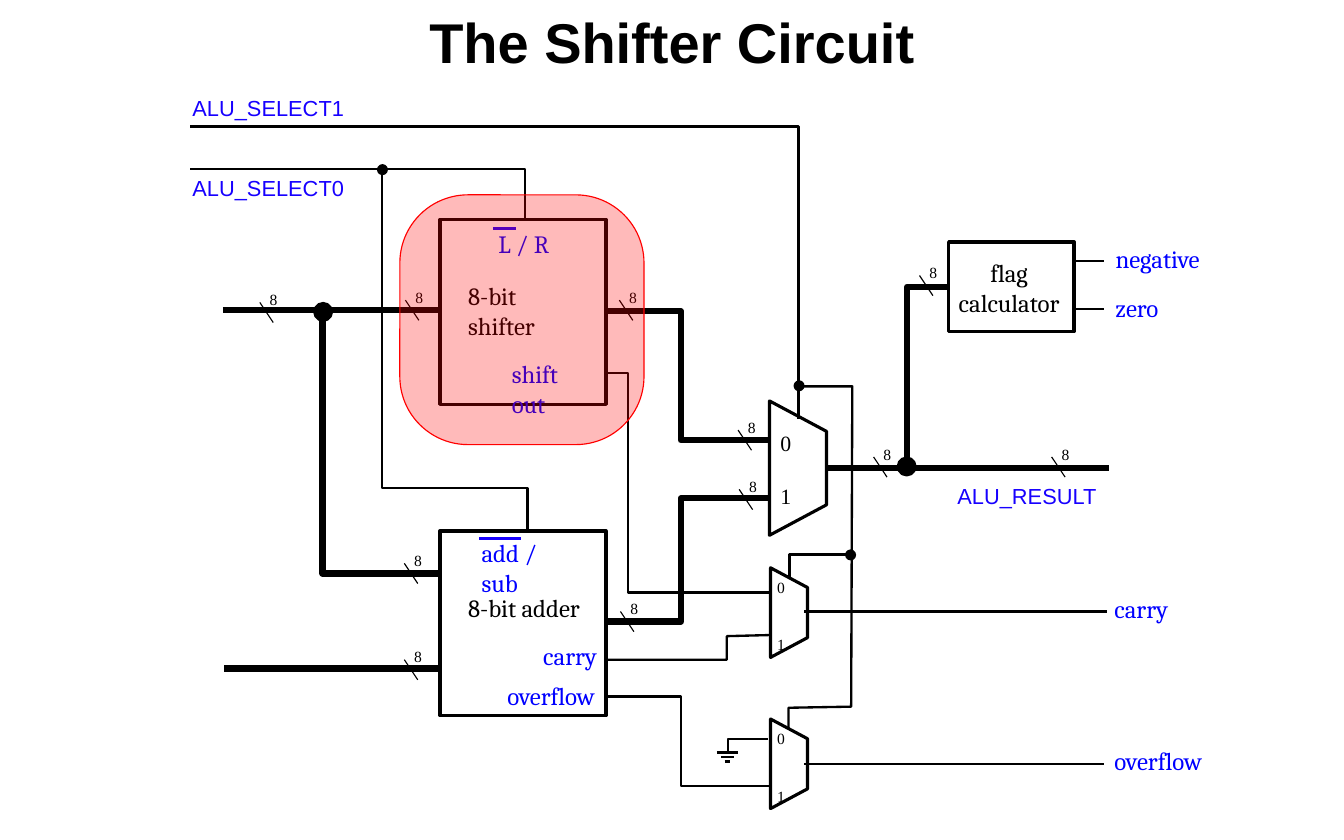
from lxml import etree
from pptx import Presentation
from pptx import util as u
from pptx.dml.color import RGBColor
from pptx.enum import shapes, text
from pptx.oxml.ns import qn

COLOURS = {"ink": "000000", "paper": "FFFFFF", "signal": "0000FF",
           "select": "1700FF", "highlight": "FF0000"}
THIN, BUS = 1.5, 4
LABEL, SELECT, DIGIT = ("Cambria", 16), ("Arial", 14), ("Times New Roman", 10)
CM_PER_UNIT = 2.54


def cm(units):
    return u.Cm(units * CM_PER_UNIT)


def rgb(name):
    return RGBColor.from_string(COLOURS[name])


def add_line(slide, start, end, weight=THIN, colour="ink"):
    line = slide.shapes.add_connector(
        shapes.MSO_CONNECTOR.STRAIGHT, *map(cm, start + end))
    line.line.width = u.Pt(weight)
    line.line.color.rgb = rgb(colour)
    etree.SubElement(line._element.spPr, qn("a:effectLst"))


def add_wire(slide, points, weight=THIN):
    if len(points) == 2:
        add_line(slide, *points, weight)
        return
    start, *rest = [(cm(x), cm(y)) for x, y in points]
    builder = slide.shapes.build_freeform(*start)
    builder.add_line_segments(rest, close=False)
    wire = builder.convert_to_shape()
    wire.shadow.inherit = False
    wire.fill.background()
    wire.line.color.rgb = rgb("ink")
    wire.line.width = u.Pt(weight)


def add_block(slide, kind, box, weight, fill=None, line="ink"):
    block = slide.shapes.add_shape(kind, *map(cm, box))
    block.shadow.inherit = False
    if fill:
        block.fill.solid()
        block.fill.fore_color.rgb = rgb(fill)
    else:
        block.fill.background()
    block.line.color.rgb = rgb(line)
    block.line.width = u.Pt(weight)
    return block


def add_label(slide, box, lines, style, colour="signal", inset=False,
              wrap=True, align=text.PP_ALIGN.LEFT, gap=0):
    frame = slide.shapes.add_textbox(*map(cm, box)).text_frame
    frame.word_wrap = wrap
    if not inset:
        frame.margin_left = frame.margin_right = 0
        frame.margin_top = frame.margin_bottom = 0
    for i, words in enumerate(lines):
        paragraph = frame.add_paragraph() if i else frame.paragraphs[0]
        paragraph.alignment = align
        if i:
            paragraph.space_before = u.Pt(gap)
        run = paragraph.add_run()
        run.text = words
        run.font.name, run.font.size = style[0], u.Pt(style[1])
        run.font.color.rgb = rgb(colour)


def draw_title(slide, box):
    title = slide.shapes.title
    title.left, title.top, title.width, title.height = map(cm, box)
    frame = title.text_frame
    frame.vertical_anchor = text.MSO_ANCHOR.MIDDLE
    paragraph = frame.paragraphs[0]
    paragraph.alignment = text.PP_ALIGN.CENTER
    run = paragraph.add_run()
    run.text = "The Shifter Circuit"
    run.font.name, run.font.size, run.font.bold = "Arial", u.Pt(36), True
    run.font.color.rgb = rgb("ink")


def draw_mux(slide, box, digit_box, style, gap):
    x, y, w, h = box
    turned = (x + (w - h) / 2, y + (h - w) / 2, h, w)
    mux = add_block(slide, shapes.MSO_SHAPE.TRAPEZOID, turned, 2, "paper")
    mux.adjustments[0] = 0.534
    mux.rotation = 90
    dx, dy, dw, dh = digit_box
    add_label(slide, (x + dx, y + dy, dw, dh), ["0", "1"], style, "ink",
              inset=True, gap=gap)


def draw_unit(slide, box, name, name_at, ports, overline):
    x, y, w, h = box
    add_block(slide, shapes.MSO_SHAPE.RECTANGLE, box, 2.25)
    add_label(slide, (x + 0.25, y + name_at, 1.07, 0.27), [name], LABEL, "ink")
    for port, dx, dy, width in ports:
        add_label(slide, (x + dx, y + dy, width, 0.27), [port], LABEL)
    left, right, dy = overline
    add_line(slide, (x + left, y + dy), (x + right, y + dy), 2, "select")


def draw_flag_calculator(slide, box):
    x, y, w, h = box
    add_block(slide, shapes.MSO_SHAPE.RECTANGLE, box, 2.25)
    add_label(slide, (x + 0.03, y + 0.14, 1.02, 0.54), ["flag", "calculator"],
              LABEL, "ink", align=text.PP_ALIGN.CENTER)
    for flag, dy, width in (("negative", 0.17, 0.82), ("zero", 0.6, 0.44)):
        add_line(slide, (x + w, y + dy), (x + w + 0.27, y + dy))
        add_label(slide, (x + w + 0.37, y + dy - 0.15, width, 0.27), [flag], LABEL)


def draw_ground(slide, box):
    x, y, w, h = box
    for width, dy in ((w, 0), (w * 0.58, h / 2), (w * 0.26, h)):
        left = x + (w - width) / 2
        add_line(slide, (left, y + dy), (left + width, y + dy))


def draw_wiring(slide, box):
    x, y, w, h = box
    buses = [
        [(1.99, 2.77), (3.93, 2.77)],
        [(2, 5.97), (3.93, 5.97)],
        [(2.88, 2.78), (2.88, 5.12), (3.93, 5.12)],
        [(5.42, 2.78), (6.08, 2.78), (6.08, 3.93), (6.86, 3.93)],
        [(5.43, 5.55), (6.08, 5.55), (6.08, 4.45), (6.87, 4.45)],
        [(7.38, 4.18), (9.9, 4.18)],
        [(8.1, 4.16), (8.1, 2.56), (8.47, 2.56)],
    ]
    wires = [
        [(4.71, 4.74), (4.71, 4.36), (3.41, 4.36), (3.41, 1.51)],
        [(4.69, 1.96), (4.69, 1.51), (1.7, 1.51)],
        [(7.13, 3.74), (7.13, 1.13), (1.7, 1.13)],
        [(7.05, 5.16), (7.05, 4.95), (7.6, 4.95)],
        [(7.04, 6.51), (7.04, 6.32), (7.6, 6.31), (7.61, 3.45), (7.13, 3.45)],
        [(5.41, 3.33), (5.61, 3.33), (5.61, 5.29), (6.89, 5.29)],
        [(5.43, 5.89), (6.49, 5.89), (6.49, 5.68), (6.87, 5.67)],
        [(5.42, 6.22), (6.08, 6.22), (6.08, 7.02), (6.87, 7.02)],
        [(6.5, 6.72), (6.5, 6.6), (6.86, 6.6)],
        [(7.18, 5.46), (9.88, 5.46)],
        [(7.18, 6.82), (9.86, 6.82)],
    ]
    for weight, routes in ((BUS, buses), (THIN, wires)):
        for route in routes:
            add_wire(slide, [(x + px, y + py) for px, py in route], weight)

    bus_marks = [(5.53, 2.68), (2.32, 2.7), (3.61, 5.03), (3.61, 5.89),
                 (3.62, 2.68), (5.54, 5.46), (8.21, 2.46), (7.8, 4.08),
                 (9.39, 4.08), (6.59, 3.84), (6.6, 4.37)]
    for mx, my in bus_marks:
        mx, my = x + mx, y + my
        add_line(slide, (mx, my), (mx + 0.12, my + 0.18), 0.75)
        add_label(slide, (mx - 0.01, my - 0.16, 0.27, 0.27), ["8"], DIGIT,
                  "ink", inset=True)

    junctions = [(7.56, 4.92, 0.07), (7.1, 3.41, 0.07), (3.38, 1.48, 0.07),
                 (8.02, 4.09, 0.15), (2.81, 2.71, 0.15)]
    for jx, jy, size in junctions:
        add_block(slide, shapes.MSO_SHAPE.OVAL, (x + jx, y + jy, size, size),
                  2, "ink")


def draw_signal_names(slide, box):
    x, y, w, h = box
    for name, dx, dy, width in (("ALU_SELECT1", 1.62, 0.8, 1.57),
                                ("ALU_SELECT0", 1.62, 1.51, 1.57),
                                ("ALU_RESULT", 8.45, 4.26, 1.45)):
        add_label(slide, (x + dx, y + dy, width, 0.34), [name], SELECT,
                  "select", inset=True, wrap=False)
    for name, dy, width in (("carry", 5.3, 0.52), ("overflow", 6.66, 0.87)):
        add_label(slide, (x + 9.95, y + dy, width, 0.27), [name], LABEL)


def draw_highlight(slide, box):
    highlight = add_block(slide, shapes.MSO_SHAPE.ROUNDED_RECTANGLE, box, 0.75,
                          "highlight", "highlight")
    highlight.adjustments[0] = 0.279
    colour = highlight._element.spPr.find(qn("a:solidFill"))[0]
    etree.SubElement(colour, qn("a:alpha"), val="27000")


def main():
    deck = Presentation()
    deck.slide_width, deck.slide_height = cm(12), cm(7.5)
    slide = deck.slides.add_slide(deck.slide_layouts[5])
    page = (0, 0, 12, 7.5)
    draw_title(slide, (1, -0.01, 10, 0.75))
    draw_mux(slide, (6.87, 3.58, 0.51, 1.2), (0, 0.21, 0.48, 0.85),
             ("Times New Roman", 14), 17)
    for top in (5.07, 6.42):
        draw_mux(slide, (6.88, top, 0.33, 0.8), (-0.04, 0.04, 0.27, 0.72), DIGIT, 25)
    draw_flag_calculator(slide, (8.47, 2.16, 1.12, 0.8))
    draw_unit(slide, (3.93, 4.74, 1.48, 1.65), "8-bit adder", 0.55,
              [("add / sub", 0.37, 0.06, 0.81), ("carry", 0.92, 0.98, 0.52),
               ("overflow", 0.6, 1.34, 0.87)], (0.35, 0.72, 0.07))
    draw_unit(slide, (3.93, 1.96, 1.48, 1.65), "8-bit shifter", 0.55,
              [("L / R", 0.52, 0.08, 0.47), ("shift out", 0.64, 1.24, 0.74)],
              (0.47, 0.68, 0.08))
    draw_wiring(slide, page)
    draw_signal_names(slide, page)
    draw_ground(slide, (6.4, 6.72, 0.19, 0.08))
    draw_highlight(slide, (3.57, 1.74, 2.18, 2.23))
    deck.save("out.pptx")


if __name__ == "__main__":
    main()
